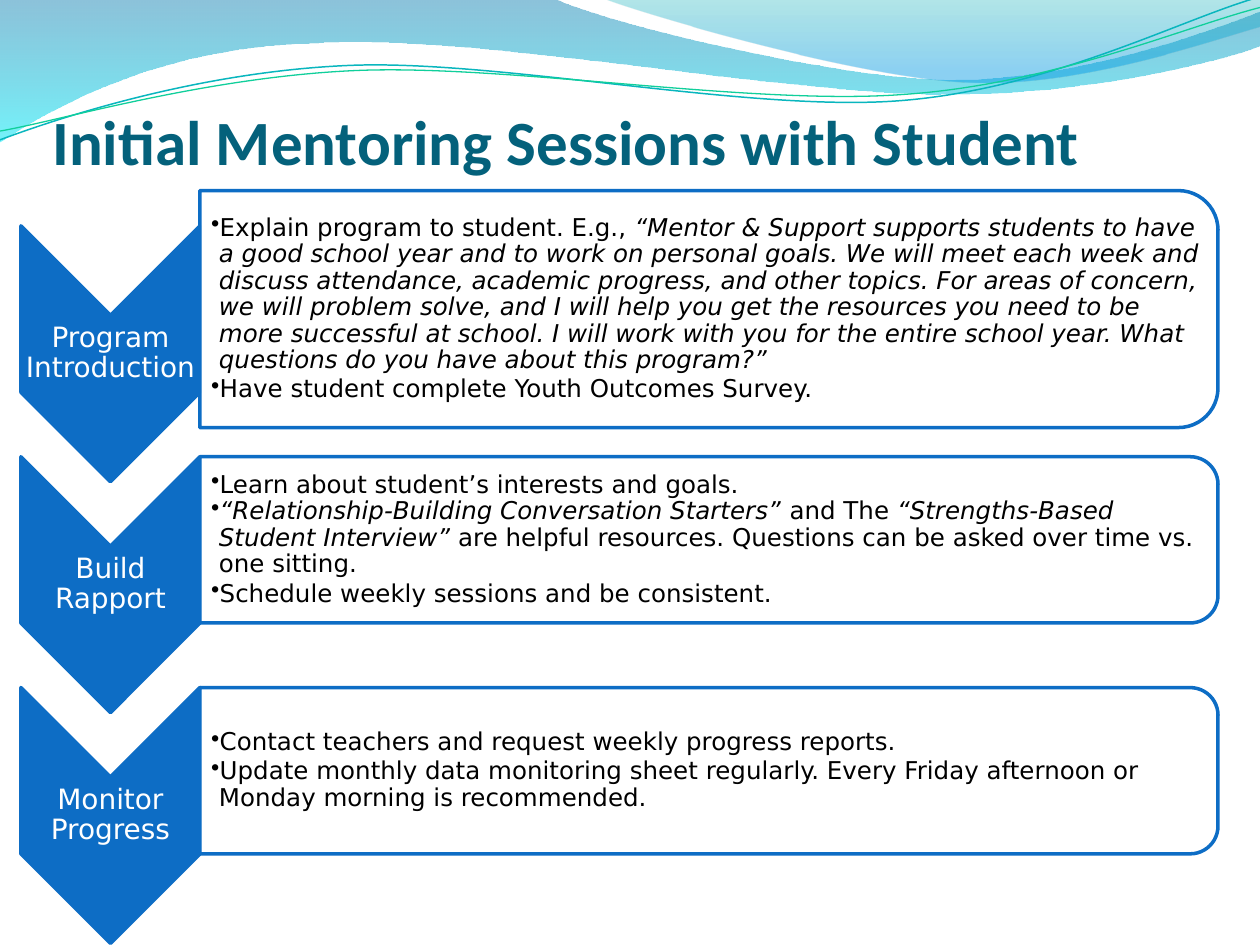
from math import cos, radians, sin

from lxml import etree
from pptx import Presentation
from pptx.dml.color import RGBColor
from pptx.enum.shapes import MSO_SHAPE
from pptx.enum.text import MSO_ANCHOR, PP_ALIGN
from pptx.oxml.ns import qn
from pptx.util import Pt

CHEVRON, PANEL = MSO_SHAPE.CHEVRON, MSO_SHAPE.ROUND_2_SAME_RECTANGLE
MIDDLE, BOTTOM = MSO_ANCHOR.MIDDLE, MSO_ANCHOR.BOTTOM
CENTER, LEFT = PP_ALIGN.CENTER, PP_ALIGN.LEFT

WHITE = RGBColor(0xFF, 0xFF, 0xFF)
BLACK = RGBColor(0x00, 0x00, 0x00)
BLUE = RGBColor(0x0D, 0x6D, 0xC5)
TITLE_TEAL = RGBColor(0x04, 0x61, 0x7B)
DEEP_BLUE = RGBColor(0x00, 0x79, 0xAD)
CYAN = RGBColor(0x00, 0xE9, 0xF7)
SEA_GREEN = RGBColor(0x00, 0xAB, 0xB4)
SKY_BLUE = RGBColor(0x00, 0x99, 0xE4)
LINE_TEAL = RGBColor(0x09, 0xB6, 0xBE)
LINE_GREEN = RGBColor(0x10, 0xCF, 0x9B)

TITLE_FONT = {"name": "Calibri", "size": Pt(36), "bold": True}
LABEL_FONT = {"name": "DejaVu Sans", "size": Pt(16)}
BODY_FONT = {"name": "DejaVu Sans", "size": Pt(14)}

# Outlines are lists of steps in points: two numbers for a line, six for a curve.
# Fill stops are (position, colour, opacity in percent).
WAVES = [
    ([(0, 0), (316.8, -0.7), (342.7, 12.2, 478.1, 45.4, 545.8, 45.4),
      (614.2, 45.4, 689.8, 18.7, 720, 6.5), (720.7, 25.9),
      (707.8, 31.7, 626.4, 54.7, 537.1, 54), (447.8, 54, 275, 20.2, 185, 24.5),
      (92.9, 25.9, 33.1, 59.8, -0.7, 81.4)],
     [(0, DEEP_BLUE, 45), (1, CYAN, 55)]),
    ([(344.9, -0.7), (366.5, 7.9, 491, 44.6, 553.7, 46.8),
      (616.3, 49.7, 691.9, 23, 720, 15.1), (720, 0)],
     [(0, SEA_GREEN, 30), (0.8, SKY_BLUE, 45)]),
]
# Each swoosh also has the centre that it turns about.
SWOOSHES = [
    ([(0, 79.9), (34.6, 67, 113.8, 41, 199.4, 37.4),
      (284.4, 33.8, 427, 64.1, 513.4, 57.6), (599.8, 51.1, 675.4, 10.8, 718.6, -1.4)],
     (359.3, 41.4), LINE_TEAL, 0.85),
    ([(0, 74.9), (33.8, 69.1, 118.1, 43.9, 203.8, 40.3),
      (290.2, 36.7, 429.8, 60.5, 516.2, 54), (601.9, 48.2, 677.5, 15.1, 720, 4.3)],
     (359.6, 42.5), LINE_GREEN, 0.75),
]
SWOOSH_TILT = 2.7

# Text between asterisks is italic; each bullet has its space before in points.
STAGES = [
    ("Program Introduction", 135.4, [
        ("Explain program to student. E.g., *“Mentor & Support supports students to have "
         "a good school year and to work on personal goals. We will meet each week and "
         "discuss attendance, academic progress, and other topics. For areas of concern, "
         "we will problem solve, and I will help you get the resources you need to be "
         "more successful at school. I will work with you for the entire school year. "
         "What questions do you have about this program?”*", 0),
        ("Have student complete Youth Outcomes Survey.", 1.6)]),
    ("Build Rapport", 95, [
        ("Learn about student’s interests and goals.", 0),
        ("*“Relationship-Building Conversation Starters”* and The *“Strengths-Based "
         "Student Interview” *are helpful resources. Questions can be asked over time "
         "vs. one sitting.", 0),
        ("Schedule weekly sessions and be consistent.", 1.6)]),
    ("Monitor Progress", 95, [
        ("Contact teachers and request weekly progress reports.", 0),
        ("Update monthly data monitoring sheet regularly. Every Friday afternoon or "
         "Monday morning is recommended.", 1.6)]),
]
FIRST_CENTER, STAGE_PITCH, PANEL_RISE = 202.2, 131.9, 25.6
PANEL_LEFT, PANEL_WIDTH = 114.2, 581.8


def add_outline(slide, steps, close):
    """Draw through all points, then join each curve's three points into one Bézier."""
    points = [(Pt(x), Pt(y)) for step in steps for x, y in zip(step[::2], step[1::2])]
    builder = slide.shapes.build_freeform(*points[0], scale=1.0)
    builder.add_line_segments(points[1:], close=close)
    shape = builder.convert_to_shape()
    shape.shadow.inherit = False
    segments = iter(list(shape._element.iter(qn("a:lnTo"))))
    for step in steps[1:]:
        segment = next(segments)
        if len(step) == 6:
            segment.tag = qn("a:cubicBezTo")
            for _ in range(2):
                extra = next(segments)
                segment.append(extra[0])
                extra.getparent().remove(extra)
    return shape


def turn(step, center, degrees):
    """Turn a step's points clockwise about the centre."""
    angle = radians(degrees)
    turned = []
    for x, y in zip(step[::2], step[1::2]):
        dx, dy = x - center[0], y - center[1]
        turned += [center[0] + dx * cos(angle) - dy * sin(angle),
                   center[1] + dx * sin(angle) + dy * cos(angle)]
    return turned


def set_opacity(shape, percents):
    """Apply one opacity to each fill colour, in order."""
    for color, percent in zip(shape._element.spPr.iter(qn("a:srgbClr")), percents):
        etree.SubElement(color, qn("a:alpha"), val=str(percent * 1000))


def add_wave(slide, steps, stops):
    shape = add_outline(slide, steps, True)
    shape.line.fill.background()
    shape.fill.gradient()
    shape.fill.gradient_angle = 270
    for stop, (position, color, _) in zip(shape.fill.gradient_stops, stops):
        stop.position = position
        stop.color.rgb = color
    set_opacity(shape, [opacity for _, _, opacity in stops])


def add_swoosh(slide, steps, center, color, weight):
    level_steps = [turn(step, center, SWOOSH_TILT) for step in steps]
    shape = add_outline(slide, level_steps, False)
    shape.rotation = 360 - SWOOSH_TILT
    shape.fill.background()
    shape.line.color.rgb = color
    shape.line.width = Pt(weight)


def add_turned_shape(slide, kind, center, seen_size, adjustments, fill, opacity=100):
    """Add a shape turned a quarter; seen_size is its size after the turn."""
    height, width = seen_size
    x, y = center
    shape = slide.shapes.add_shape(kind, Pt(x - width / 2), Pt(y - height / 2),
                                   Pt(width), Pt(height))
    shape.rotation = 90
    shape.shadow.inherit = False
    for index, value in enumerate(adjustments):
        shape.adjustments[index] = value
    shape.fill.solid()
    shape.fill.fore_color.rgb = fill
    if opacity < 100:
        set_opacity(shape, [opacity])
    shape.line.color.rgb = BLUE
    shape.line.width = Pt(2)


def add_text_frame(slide, left, top, width, height, anchor, margins):
    box = slide.shapes.add_textbox(Pt(left), Pt(top), Pt(width), Pt(height))
    frame = box.text_frame
    frame.word_wrap = True
    frame.vertical_anchor = anchor
    for side, margin in zip(("left", "top", "right", "bottom"), margins):
        setattr(frame, f"margin_{side}", Pt(margin))
    return frame


def write_spans(para, text, font, color):
    for index, part in enumerate(text.split("*")):
        if not part:
            continue
        span = para.add_run()
        span.text = part
        for name, value in font.items():
            setattr(span.font, name, value)
        span.font.color.rgb = color
        if index % 2:
            span.font.italic = True


def add_bullet(para):
    properties = para._p.get_or_add_pPr()
    properties.set("marL", str(Pt(4.5)))
    properties.set("indent", str(-Pt(4.5)))
    color = etree.SubElement(properties, qn("a:buClr"))
    etree.SubElement(color, qn("a:srgbClr"), val=str(BLACK))
    etree.SubElement(properties, qn("a:buChar"), char="•")


def add_stage(slide, center_y, label, panel_height, bullets):
    add_turned_shape(slide, CHEVRON, (63.1, center_y), (102.3, 146.2), [0.5], BLUE)
    frame = add_text_frame(slide, 12, center_y - 22, 102.3, 44, MIDDLE, [0.8] * 4)
    para = frame.paragraphs[0]
    para.alignment = CENTER
    para.line_spacing = 0.9
    write_spans(para, label, LABEL_FONT, WHITE)

    panel_y = center_y - PANEL_RISE
    add_turned_shape(slide, PANEL, (PANEL_LEFT + PANEL_WIDTH / 2, panel_y),
                     (PANEL_WIDTH, panel_height), [0.167, 0], WHITE, 90)
    text_height = 0.9 * panel_height
    frame = add_text_frame(slide, PANEL_LEFT, panel_y - text_height / 2, 576,
                           text_height, MIDDLE, (6.4, 0.8, 0.8, 0.8))
    for index, (text, space) in enumerate(bullets):
        para = frame.add_paragraph() if index else frame.paragraphs[0]
        add_bullet(para)
        para.alignment = LEFT
        para.line_spacing = 0.9
        para.space_before = Pt(space)
        write_spans(para, text, BODY_FONT, BLACK)


def main():
    deck = Presentation()
    deck.slide_width, deck.slide_height = Pt(720), Pt(540)
    slide = deck.slides.add_slide(deck.slide_layouts[6])
    for wave in WAVES:
        add_wave(slide, *wave)
    for swoosh in SWOOSHES:
        add_swoosh(slide, *swoosh)
    title = add_text_frame(slide, 30, 12, 648, 90, BOTTOM, (0, 3.6, 0, 0))
    write_spans(title.paragraphs[0], "Initial Mentoring Sessions with Student",
                TITLE_FONT, TITLE_TEAL)
    for index, stage in enumerate(STAGES):
        add_stage(slide, FIRST_CENTER + index * STAGE_PITCH, *stage)
    deck.save("out.pptx")


if __name__ == "__main__":
    main()
